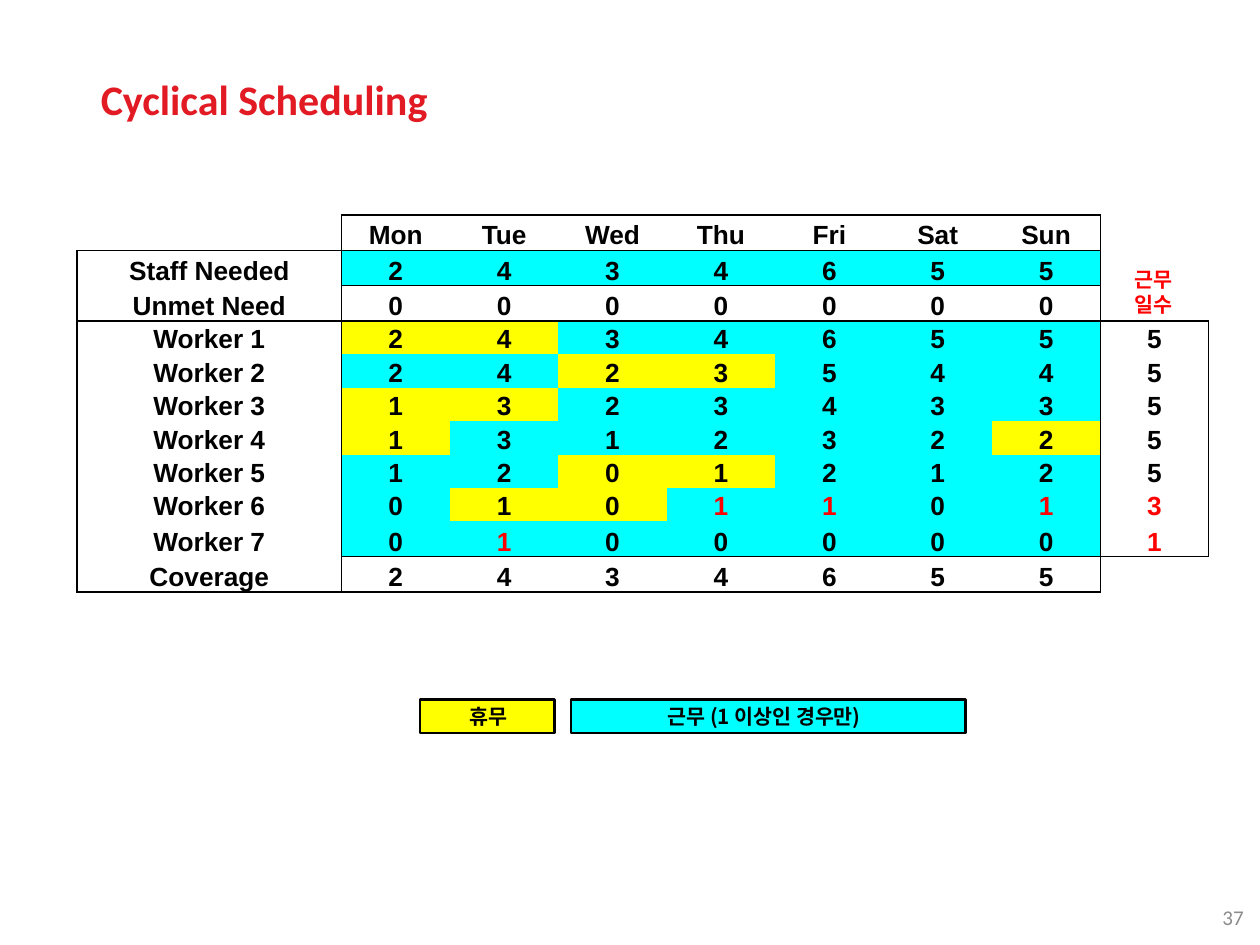
from lxml.etree import SubElement
from pptx import Presentation
from pptx.dml.color import RGBColor
from pptx.enum.shapes import MSO_SHAPE as Shape
from pptx.enum.text import MSO_ANCHOR as Anchor, PP_ALIGN as Align
from pptx.oxml import parse_xml
from pptx.oxml.ns import nsdecls, qn
from pptx.util import Pt

BLACK = RGBColor(0x00, 0x00, 0x00)
RED = RGBColor(0xFF, 0x00, 0x00)
TITLE_RED = RGBColor(0xE2, 0x1A, 0x23)
GRAY = RGBColor(0x8C, 0x8C, 0x8C)
CYAN = RGBColor(0x00, 0xFF, 0xFF)
YELLOW = RGBColor(0xFF, 0xFF, 0x00)

KOREAN = "Noto Sans CJK KR"
NO_STYLE = "{2D5ABB26-0587-4C30-8999-92F81FD0307C}"

# Schedule: label, seven days, working days
SCHEDULE = [
    ("", "Mon", "Tue", "Wed", "Thu", "Fri", "Sat", "Sun", ""),
    ("Staff Needed", 2, 4, 3, 4, 6, 5, 5, ""),
    ("Unmet Need", 0, 0, 0, 0, 0, 0, 0, ""),
    ("Worker 1", 2, 4, 3, 4, 6, 5, 5, 5),
    ("Worker 2", 2, 4, 2, 3, 5, 4, 4, 5),
    ("Worker 3", 1, 3, 2, 3, 4, 3, 3, 5),
    ("Worker 4", 1, 3, 1, 2, 3, 2, 2, 5),
    ("Worker 5", 1, 2, 0, 1, 2, 1, 2, 5),
    ("Worker 6", 0, 1, 0, 1, 1, 0, 1, 3),
    ("Worker 7", 0, 1, 0, 0, 0, 0, 0, 1),
    ("Coverage", 2, 4, 3, 4, 6, 5, 5, ""),
    ("",) * 9,
]
TALL, SHORT = 20.2, 19.1
ROW_HEIGHTS = [TALL] * 3 + [SHORT] * 6 + [TALL] * 2 + [SHORT]
COLUMN_WIDTHS = [151.2] + [61.95] * 8

# Cells given as (row, column)
DAYS_OFF = {(3, 1), (3, 2), (4, 3), (4, 4), (5, 1), (5, 2), (6, 1), (6, 7),
            (7, 3), (7, 4), (8, 2), (8, 3)}
RED_CELLS = {(8, 4), (8, 5), (8, 7), (8, 8), (9, 2), (9, 8)}
WORK_ROWS = {1, *range(3, 10)}

# Outlined blocks: first row, first column, last row, last column
BLOCKS = [(0, 1, 0, 7), (1, 1, 1, 7), (2, 1, 2, 7), (3, 1, 9, 7),
          (10, 1, 10, 7), (1, 0, 2, 0), (3, 0, 10, 0), (3, 8, 9, 8)]


def block_edges(blocks):
    """Grid edges, shared by the cells on both sides of each."""
    edges = set()
    for top, left, bottom, right in blocks:
        for column in range(left, right + 1):
            edges |= {("h", top, column), ("h", bottom + 1, column)}
        for row in range(top, bottom + 1):
            edges |= {("v", row, left), ("v", row, right + 1)}
    return edges


class SlideBuilder:
    def __init__(self, slide):
        self.slide = slide

    def run(self, paragraph, text, size, color, font="Arial", bold=True):
        run = paragraph.add_run()
        run.text = text
        run.font.name = font
        run.font.size = Pt(size)
        run.font.bold = bold
        run.font.color.rgb = color
        if font == KOREAN:
            SubElement(run.font._element, qn("a:ea"), typeface=font)

    def text(self, box, lines, size, color, font, bold=True, inset=None,
             wrap=True, anchor=Anchor.TOP, align=Align.LEFT):
        frame = self.slide.shapes.add_textbox(*map(Pt, box)).text_frame
        frame.word_wrap = wrap
        frame.vertical_anchor = anchor
        if inset is not None:
            frame.margin_left = frame.margin_right = Pt(inset)
            frame.margin_top = frame.margin_bottom = Pt(inset)
        for index, line in enumerate(lines):
            paragraph = frame.add_paragraph() if index else frame.paragraphs[0]
            paragraph.alignment = align
            self.run(paragraph, line, size, color, font, bold)

    def rectangle(self, box, fill):
        shape = self.slide.shapes.add_shape(Shape.RECTANGLE, *map(Pt, box))
        shape.shadow.inherit = False
        shape.fill.solid()
        shape.fill.fore_color.rgb = fill
        shape.line.color.rgb = BLACK
        shape.line.width = Pt(1.5)

    def borders(self, cell, row, column, edges):
        sides = {"lnL": ("v", row, column), "lnR": ("v", row, column + 1),
                 "lnT": ("h", row, column), "lnB": ("h", row + 1, column)}
        properties = cell._tc.get_or_add_tcPr()
        for index, (tag, edge) in enumerate(sides.items()):
            paint = (f'<a:solidFill><a:srgbClr val="{BLACK}"/></a:solidFill>'
                     if edge in edges else "<a:noFill/>")
            properties.insert(index, parse_xml(
                f'<a:{tag} {nsdecls("a")} w="{Pt(1)}">{paint}</a:{tag}>'))

    def cell(self, cell, text, color, fill):
        cell.margin_left = cell.margin_right = 0
        cell.margin_top = cell.margin_bottom = 0
        cell.vertical_anchor = Anchor.BOTTOM
        if fill is None:
            cell.fill.background()
        else:
            cell.fill.solid()
            cell.fill.fore_color.rgb = fill
        paragraph = cell.text_frame.paragraphs[0]
        paragraph.alignment = Align.CENTER
        if text:
            self.run(paragraph, text, 15, color)
        else:  # keeps an empty row from growing
            SubElement(paragraph._p, qn("a:endParaRPr"), sz="1000")

    def table(self, left, top, rows):
        frame = self.slide.shapes.add_table(
            len(rows), len(COLUMN_WIDTHS), Pt(left), Pt(top),
            Pt(sum(COLUMN_WIDTHS)), Pt(sum(ROW_HEIGHTS)))
        table = frame.table
        table.first_row = table.horz_banding = False
        table._tbl.tblPr.find(qn("a:tableStyleId")).text = NO_STYLE
        for column, width in zip(table.columns, COLUMN_WIDTHS):
            column.width = Pt(width)
        for row, height in zip(table.rows, ROW_HEIGHTS):
            row.height = Pt(height)
        edges = block_edges(BLOCKS)
        for r, values in enumerate(rows):
            for c, value in enumerate(values):
                fill = None
                if (r, c) in DAYS_OFF:
                    fill = YELLOW
                elif r in WORK_ROWS and 1 <= c <= 7:
                    fill = CYAN
                color = RED if (r, c) in RED_CELLS else BLACK
                self.cell(table.cell(r, c), str(value), color, fill)
                self.borders(table.cell(r, c), r, c, edges)


def main():
    presentation = Presentation()
    presentation.slide_width, presentation.slide_height = Pt(720), Pt(540)
    builder = SlideBuilder(
        presentation.slides.add_slide(presentation.slide_layouts[6]))

    # Title
    builder.text((57.6, 17.3, 573, 77.8), ["Cyclical Scheduling"], 24,
                 TITLE_RED, "Calibri", inset=0, anchor=Anchor.MIDDLE)

    # Schedule and heading of its last column
    builder.table(44, 122.9, SCHEDULE)
    builder.text((641.5, 149, 38.9, 36), ["근무", "일수"], 11.8, RED, KOREAN,
                 wrap=False)

    # Legend
    builder.rectangle((240, 399.6, 77, 19.4), YELLOW)
    builder.rectangle((326.2, 399.6, 225.6, 19.4), CYAN)
    builder.text((261.4, 398.9, 38.9, 21.6), ["휴무"], 11.8, BLACK, KOREAN,
                 wrap=False)
    builder.text((374.4, 398.9, 163.4, 21.6), ["근무 (1 이상인 경우만)"], 11.8,
                 BLACK, KOREAN)

    # Slide number
    builder.text((529.2, 509.8, 188.6, 28.8), ["37"], 12, GRAY, "Calibri",
                 bold=False, anchor=Anchor.MIDDLE, align=Align.RIGHT)

    presentation.save("out.pptx")


if __name__ == "__main__":
    main()
